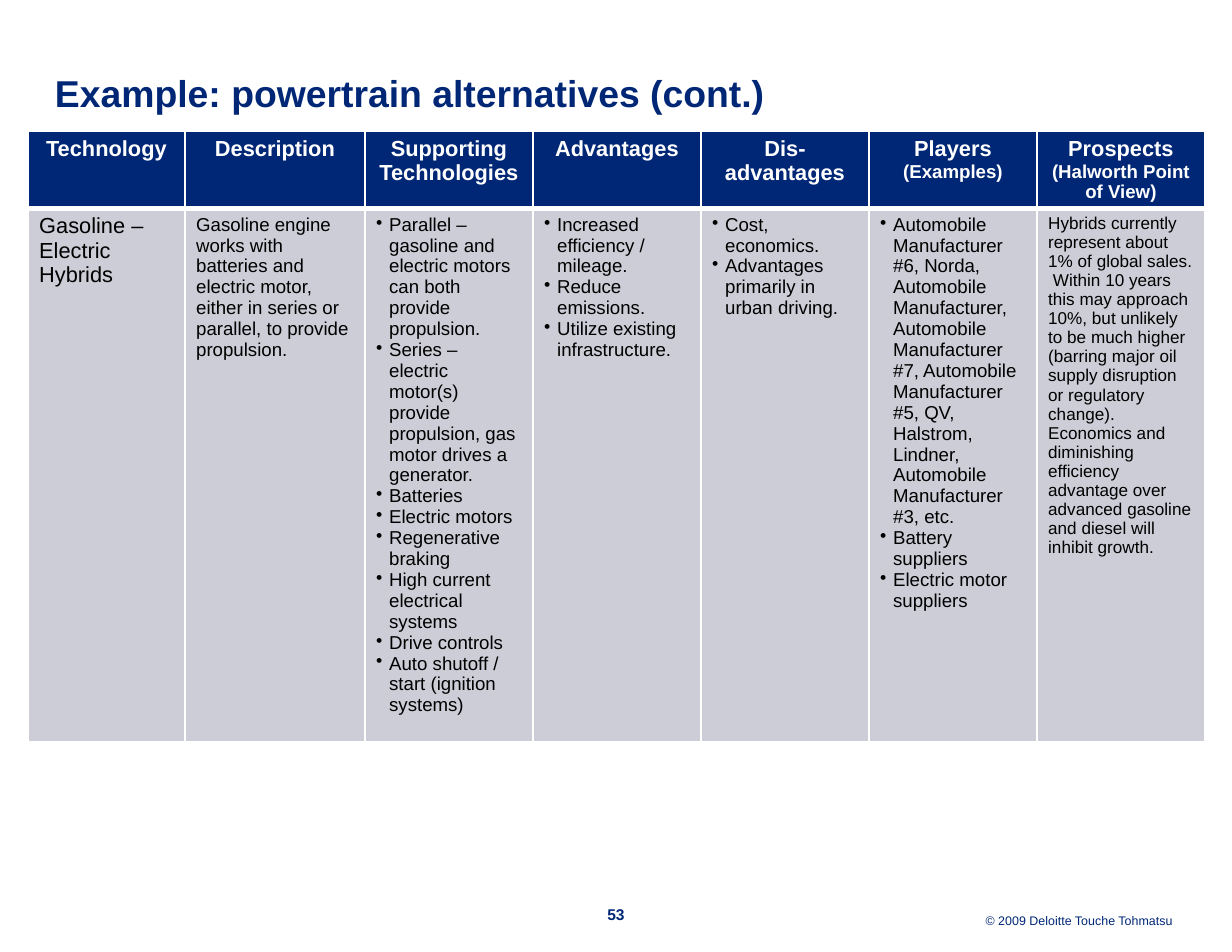
from lxml import etree
from pptx import Presentation
from pptx.dml.color import RGBColor
from pptx.enum.text import MSO_ANCHOR, MSO_AUTO_SIZE, PP_ALIGN
from pptx.oxml.ns import qn
from pptx.util import Pt

LEFT, MID, RIGHT = PP_ALIGN.LEFT, PP_ALIGN.CENTER, PP_ALIGN.RIGHT
CENTER, NO_FIT = MSO_ANCHOR.MIDDLE, MSO_AUTO_SIZE.NONE
PX = 914400 / 112
INK = {"navy": "002776", "white": "FFFFFF", "black": "000000", "gray": "CCCDD6"}


def px(n):
    return round(n * PX)


def write(frame, paras, size=12, color="black", bold=False, align=LEFT,
          bullet=False, lead=None, inset=None):
    frame.word_wrap = True
    if inset is not None:
        frame.margin_left = frame.margin_right = px(inset)
        frame.margin_top = frame.margin_bottom = px(inset)
    for i, runs in enumerate(paras):
        para = frame.add_paragraph() if i else frame.paragraphs[0]
        para.alignment = align
        if lead:
            para.line_spacing = lead
        if bullet:
            props = para._p.get_or_add_pPr()
            props.set("marL", str(px(13)))
            props.set("indent", str(px(-13)))
            etree.SubElement(props, qn("a:buChar"), char="•")
        if isinstance(runs, str):
            runs = [(runs, size)]
        for words, points in runs:
            run = para.add_run()
            run.text = words
            run.font.name = "Arial"
            run.font.size = Pt(points)
            run.font.bold = bold
            run.font.color.rgb = RGBColor.from_string(INK[color])


deck = Presentation()
deck.slide_width, deck.slide_height = px(1232), px(952)
slide = deck.slides.add_slide(deck.slide_layouts[5])

title = slide.shapes.title
title.left, title.top, title.width, title.height = px(55), px(48), px(1135), px(87)
title.text_frame.auto_size = NO_FIT
title.text_frame.vertical_anchor = CENTER
write(title.text_frame, ["Example: powertrain alternatives (cont.)"], size=24,
      color="navy", bold=True, lead=1.05, inset=0)

heads = [
    "Technology", "Description", "Supporting Technologies", "Advantages",
    "Dis-advantages",
    [("Players ", 14), ("(Examples)", 12)],
    [("Prospects ", 14), ("(Halworth Point of View)", 12)],
]
body = [
    (["Gasoline – Electric Hybrids"], 14, False),
    (["Gasoline engine works with batteries and electric motor, either in series "
      "or parallel, to provide propulsion."], 12, False),
    (["Parallel – gasoline and electric motors can both provide propulsion.",
      "Series – electric motor(s) provide propulsion, gas motor drives a generator.",
      "Batteries",
      "Electric motors",
      "Regenerative braking",
      "High current electrical systems",
      "Drive controls",
      "Auto shutoff / start (ignition systems)"], 12, True),
    (["Increased efficiency / mileage.",
      "Reduce emissions.",
      "Utilize existing infrastructure."], 12, True),
    (["Cost, economics.",
      "Advantages primarily in urban driving."], 12, True),
    (["Automobile Manufacturer #6, Norda, Automobile Manufacturer, Automobile "
      "Manufacturer #7, Automobile Manufacturer #5, QV, Halstrom, Lindner, "
      "Automobile Manufacturer #3, etc.",
      "Battery suppliers",
      "Electric motor suppliers"], 12, True),
    (["Hybrids currently represent about 1% of global sales.  Within 10 years this "
      "may approach 10%, but unlikely to be much higher (barring major oil supply "
      "disruption or regulatory change).  Economics and diminishing efficiency "
      "advantage over advanced gasoline and diesel will inhibit growth."], 11, False),
]
wide = [157, 180] + [168] * 5
high = [77, 533]

table = slide.shapes.add_table(2, len(wide), px(28), px(131),
                               px(sum(wide)), px(sum(high))).table
for row, n in zip(table.rows, high):
    row.height = px(n)
for col, n in zip(table.columns, wide):
    col.width = px(n)

for c, head in enumerate(heads):
    write(table.cell(0, c).text_frame, [head], size=14, color="white",
          bold=True, align=MID)
    paras, size, bullet = body[c]
    write(table.cell(1, c).text_frame, paras, size=size, bullet=bullet)
    for r, fill in enumerate(["navy", "gray"]):
        cell = table.cell(r, c)
        props = cell._tc.get_or_add_tcPr()
        for side in "LRTB":
            thick = 3 if (r, side) == (0, "B") else 1
            line = etree.SubElement(props, qn("a:ln" + side), w=str(Pt(thick)))
            paint = etree.SubElement(line, qn("a:solidFill"))
            etree.SubElement(paint, qn("a:srgbClr"), val=INK["white"])
        cell.fill.solid()
        cell.fill.fore_color.rgb = RGBColor.from_string(INK[fill])

notes = [
    ("© 2009 Deloitte Touche Tohmatsu", 862, 909, 311, 8, False, RIGHT),
    ("53", 597, 905, 38, 10, True, MID),
]
for words, x, y, w, size, bold, align in notes:
    box = slide.shapes.add_textbox(px(x), px(y), px(w), px(20))
    write(box.text_frame, [words], size=size, color="navy", bold=bold,
          align=align, lead=Pt(12), inset=0)

deck.save("out.pptx")
